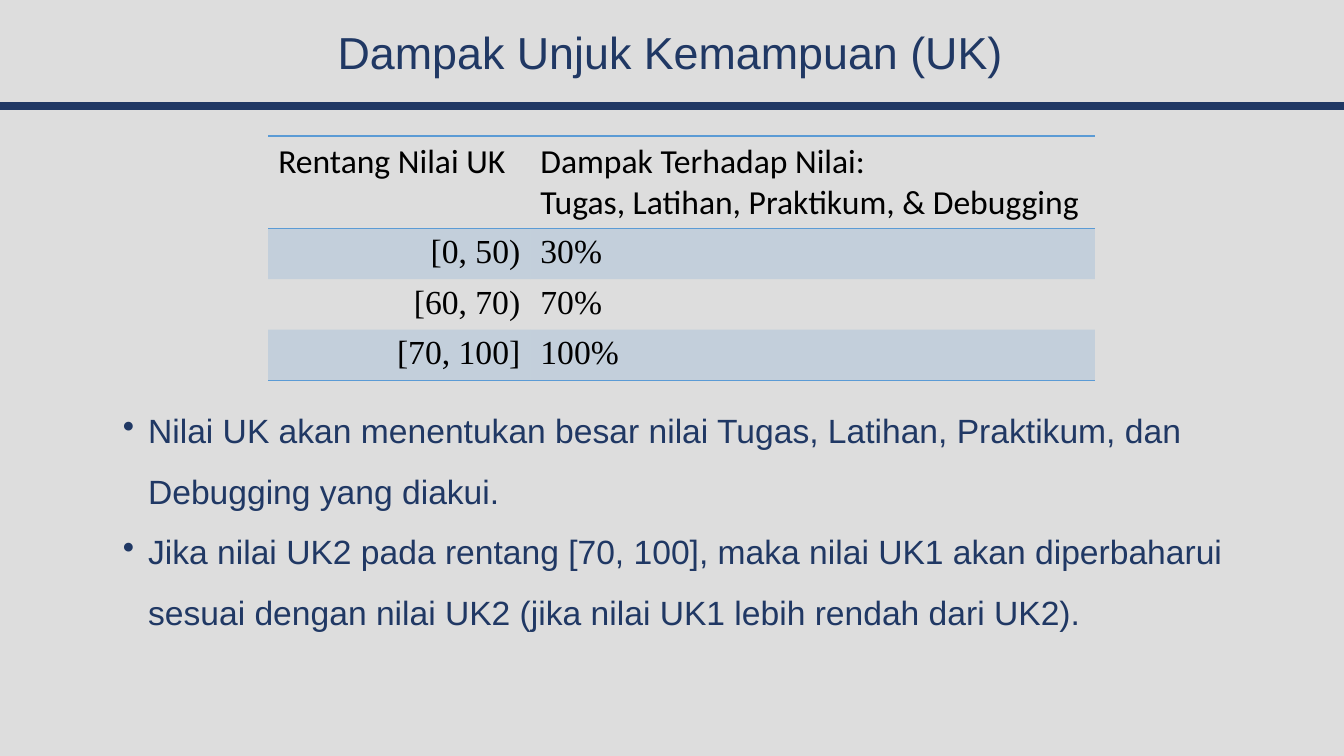
from lxml.etree import SubElement
from pptx import Presentation
from pptx.dml.color import RGBColor
from pptx.enum.text import MSO_ANCHOR, PP_ALIGN
from pptx.oxml import parse_xml
from pptx.oxml.ns import nsdecls, qn
from pptx.util import Inches, Pt

NAVY = RGBColor(0x20, 0x38, 0x64)
BLUE = RGBColor(0x5B, 0x9B, 0xD5)
GREY = RGBColor(0xDD, 0xDD, 0xDD)
BLACK = RGBColor(0, 0, 0)
NO_TABLE_STYLE = "{2D5ABB26-0587-4C30-8999-92F81FD0307C}"

TITLE = "Dampak Unjuk Kemampuan (UK)"
IMPACT_ROWS = [
    ("Rentang Nilai UK", "Dampak Terhadap Nilai:\nTugas, Latihan, Praktikum, & Debugging"),
    ("[0, 50)", "30%"),
    ("[60, 70)", "70%"),
    ("[70, 100]", "100%"),
]
NOTES = [
    "Nilai UK akan menentukan besar nilai Tugas, Latihan, Praktikum, dan Debugging yang diakui.",
    "Jika nilai UK2 pada rentang [70, 100], maka nilai UK1 akan diperbaharui "
    "sesuai dengan nilai UK2 (jika nilai UK1 lebih rendah dari UK2).",
]


def set_font(paragraph, name, size, color):
    paragraph.font.name = name
    paragraph.font.size = Pt(size)
    paragraph.font.color.rgb = color


def add_title(slide, left, top, width, height):
    frame = slide.shapes.add_textbox(left, top, width, height).text_frame
    frame.word_wrap = True
    frame.vertical_anchor = MSO_ANCHOR.MIDDLE
    title = frame.paragraphs[0]
    title.text = TITLE
    title.alignment = PP_ALIGN.CENTER
    title.line_spacing = 0.9
    set_font(title, "Arial", 32, NAVY)


def add_divider(slide, left, top, width):
    divider = slide.shapes.add_connector(1, left, top, left + width, top)
    divider.line.color.rgb = NAVY
    divider.line.width = Pt(6)
    SubElement(divider._element.spPr, qn("a:effectLst"))


def add_rule(cell, side):
    """Draw a thin blue border on one side of the cell: "T" or "B"."""
    cell._tc.get_or_add_tcPr().append(parse_xml(
        f'<a:ln{side} {nsdecls("a")} w="{Pt(1)}"><a:solidFill>'
        f'<a:srgbClr val="{BLUE}"/></a:solidFill></a:ln{side}>'))


def fill_cell(cell, banded):
    if not banded:
        cell.fill.background()
        return
    cell.fill.solid()
    cell.fill.fore_color.rgb = BLUE
    color = cell._tc.tcPr.find(".//" + qn("a:solidFill") + "/" + qn("a:srgbClr"))
    if cell._tc.tcPr.find(qn("a:solidFill")) is not None:
        color = cell._tc.tcPr.find(qn("a:solidFill")).find(qn("a:srgbClr"))
    SubElement(color, qn("a:alpha"), val="20000")


def add_impact_table(slide, left, top, width, height):
    header_height = Inches(0.92)
    row_height = (height - header_height) // (len(IMPACT_ROWS) - 1)
    range_width = Inches(2.6)
    frame = slide.shapes.add_table(len(IMPACT_ROWS), 2, left, top, width, height)
    table = frame.table
    table.first_row = table.horz_banding = False
    table._tbl.tblPr.find(qn("a:tableStyleId")).text = NO_TABLE_STYLE
    table.columns[0].width = range_width
    table.columns[1].width = width - range_width

    for r, texts in enumerate(IMPACT_ROWS):
        is_header = r == 0
        table.rows[r].height = header_height if is_header else row_height
        for c, text in enumerate(texts):
            cell = table.cell(r, c)
            cell.text = text
            for paragraph in cell.text_frame.paragraphs:
                set_font(paragraph, "Calibri" if is_header else "Times New Roman", 24, BLACK)
                if c == 0 and not is_header:
                    paragraph.alignment = PP_ALIGN.RIGHT
            if is_header:
                add_rule(cell, "T")
            if is_header or r == len(IMPACT_ROWS) - 1:
                add_rule(cell, "B")
            fill_cell(cell, banded=r % 2 == 1)


def add_notes_list(slide, left, top, width, height):
    frame = slide.shapes.add_textbox(left, top, width, height).text_frame
    frame.word_wrap = True
    frame.text = "\n".join(NOTES)
    for note in frame.paragraphs:
        note.line_spacing = 1.5
        set_font(note, "Arial", 24, NAVY)
        properties = note._p.get_or_add_pPr()
        properties.set("marL", str(Inches(0.25)))
        properties.set("indent", str(-Inches(0.25)))
        bullet = parse_xml(f'<a:buChar {nsdecls("a")} char="•"/>')
        properties.insert_element_before(bullet, "a:tabLst", "a:defRPr", "a:extLst")


def main():
    prs = Presentation()
    prs.slide_width, prs.slide_height = Inches(13.33), Inches(7.5)
    slide = prs.slides.add_slide(prs.slide_layouts[6])
    slide.background.fill.solid()
    slide.background.fill.fore_color.rgb = GREY
    add_divider(slide, 0, Inches(1.05), prs.slide_width)
    add_title(slide, Inches(0.4), Inches(0.2), Inches(12.5), Inches(0.7))
    add_notes_list(slide, Inches(1.12), Inches(3.82), Inches(11.28), Inches(2.85))
    add_impact_table(slide, Inches(2.66), Inches(1.35), Inches(8.2), Inches(2.33))
    prs.save("out.pptx")


if __name__ == "__main__":
    main()
